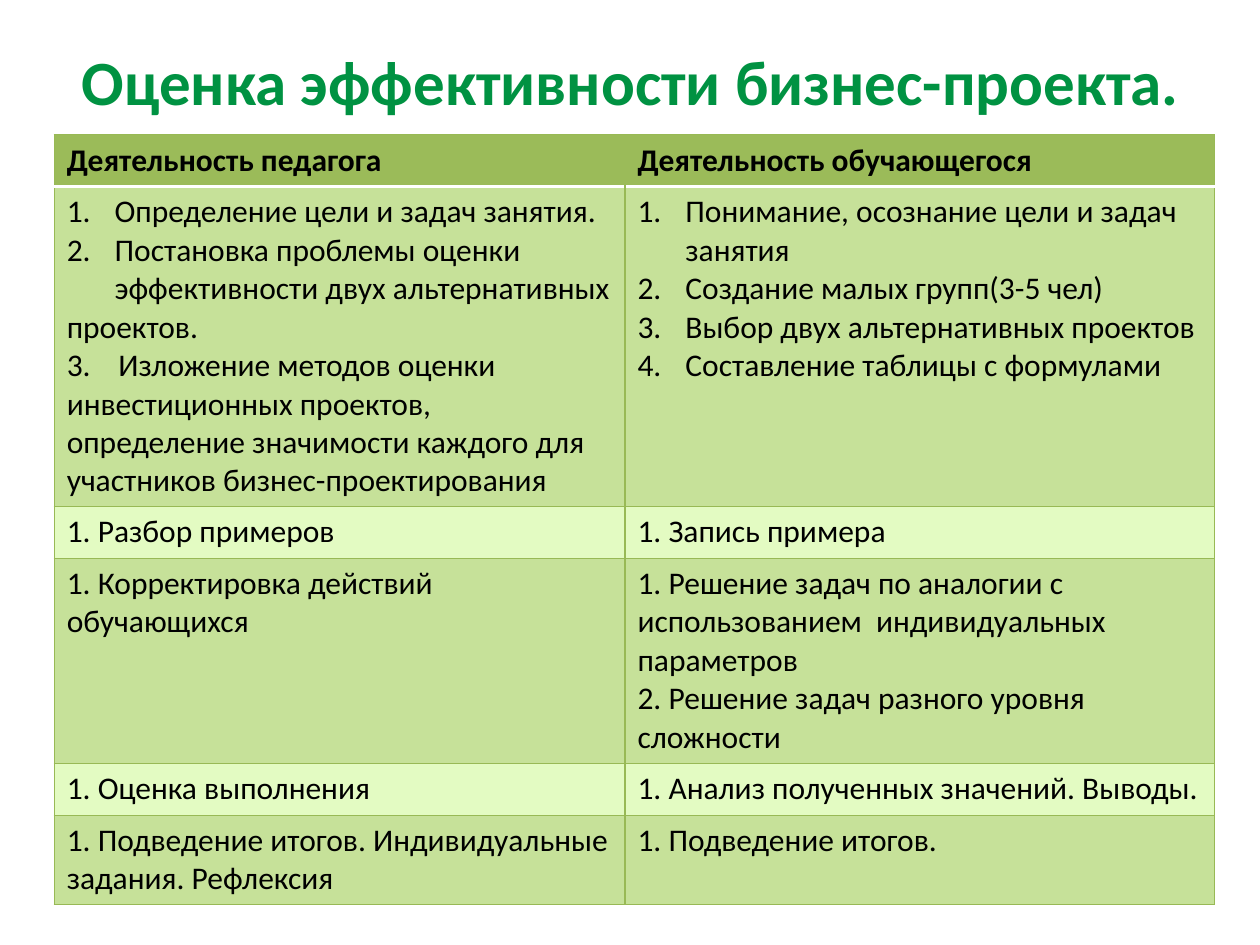
from lxml import etree
from pptx import Presentation
from pptx.dml.color import RGBColor
from pptx.enum.text import MSO_ANCHOR, PP_ALIGN
from pptx.oxml.ns import qn
from pptx.util import Inches, Pt

CENTER, MIDDLE = PP_ALIGN.CENTER, MSO_ANCHOR.MIDDLE

# Content: a tuple is a numbered list, a list is plain paragraphs
TITLE = "Оценка эффективности бизнес-проекта."
ROWS = [
    ([["Деятельность педагога"]], [["Деятельность обучающегося"]]),
    ([("Определение цели и задач занятия.",
       "Постановка проблемы оценки эффективности двух альтернативных"),
      ["проектов.",
       "3.\tИзложение методов оценки инвестиционных проектов, определение "
       "значимости каждого для участников бизнес-проектирования"]],
     [("Понимание, осознание цели и задач занятия",
       "Создание малых групп(3-5 чел)",
       "Выбор двух альтернативных проектов",
       "Составление таблицы с формулами")]),
    ([["1. Разбор примеров"]], [["1. Запись примера"]]),
    ([["1. Корректировка действий обучающихся"]],
     [["1. Решение задач по аналогии с использованием  индивидуальных параметров",
       "2. Решение задач разного уровня сложности"]]),
    ([["1. Оценка выполнения"]], [["1. Анализ полученных значений. Выводы."]]),
    ([["1. Подведение итогов. Индивидуальные задания. Рефлексия"]],
     [["1. Подведение итогов."]]),
]
COL_WIDTHS = [4.53, 4.68]
ROW_HEIGHTS = [0.41, 2.54, 0.41, 1.63, 0.41, 0.71]
NUMBER_INDENT, TAB_STOP = 0.38, 0.41

COLORS = {"title": "009242", "text": "000000", "header": "9BBB59",
          "band": "C6E199", "light": "E3FBC2", "grid": "98B955", "rule": "FFFFFF"}
TITLE_FONT = {"name": "Calibri", "size": Pt(36), "bold": True}
HEAD_FONT = {"name": "Calibri", "size": Pt(18), "bold": True}
BODY_FONT = {**HEAD_FONT, "bold": False}


def add_run(p, text, font, color):
    r = p.add_run()
    r.text = text
    for key, value in font.items():
        setattr(r.font, key, value)
    r.font.color.rgb = RGBColor.from_string(COLORS[color])


def number(p):
    pPr = p._p.get_or_add_pPr()
    pPr.set("marL", str(Inches(NUMBER_INDENT)))
    pPr.set("indent", str(-Inches(NUMBER_INDENT)))
    etree.SubElement(pPr, qn("a:buFont"), typeface="+mj-lt")
    etree.SubElement(pPr, qn("a:buAutoNum"), type="arabicPeriod")


def add_tab_stop(p):
    tabs = etree.SubElement(p._p.get_or_add_pPr(), qn("a:tabLst"))
    etree.SubElement(tabs, qn("a:tab"), pos=str(Inches(TAB_STOP)), algn="l")


def set_border(cell, side, color, width):
    ln = etree.SubElement(cell._tc.get_or_add_tcPr(), qn("a:ln" + side),
                          w=str(Pt(width)))
    if color is None:
        etree.SubElement(ln, qn("a:noFill"))
        return
    fill = etree.SubElement(ln, qn("a:solidFill"))
    etree.SubElement(fill, qn("a:srgbClr"), val=COLORS[color])


def style_cell(cell, row, col):
    borders = {side: ("grid", 0.75) for side in "LRTB"}
    if row == 0:
        borders["R" if col == 0 else "L"] = (None, 0.75)
    if row < 2:
        borders["B" if row == 0 else "T"] = ("rule", 2)
    for side, (color, width) in borders.items():
        set_border(cell, side, color, width)
    color = "header" if row == 0 else "band" if row % 2 else "light"
    cell.fill.solid()
    cell.fill.fore_color.rgb = RGBColor.from_string(COLORS[color])


def fill_cell(cell, blocks, font):
    tf = cell.text_frame
    lines = [(text, isinstance(block, tuple)) for block in blocks for text in block]
    for i, (text, numbered) in enumerate(lines):
        p = tf.add_paragraph() if i else tf.paragraphs[0]
        if numbered:
            number(p)
        elif "\t" in text:
            add_tab_stop(p)
        add_run(p, text, font, "text")


prs = Presentation()
prs.slide_width, prs.slide_height = Inches(10), Inches(7.5)
s = prs.slides.add_slide(prs.slide_layouts[6])

# Title
tf = s.shapes.add_textbox(Inches(0.28), Inches(0.01),
                          Inches(9.45), Inches(1.25)).text_frame
tf.word_wrap = True
tf.vertical_anchor = MIDDLE
tf.paragraphs[0].alignment = CENTER
add_run(tf.paragraphs[0], TITLE, TITLE_FONT, "title")

# Table
table = s.shapes.add_table(len(ROWS), len(COL_WIDTHS), Inches(0.43), Inches(1.07),
                           Inches(sum(COL_WIDTHS)), Inches(sum(ROW_HEIGHTS))).table
for column, width in zip(table.columns, COL_WIDTHS):
    column.width = Inches(width)
for i, (cells, height) in enumerate(zip(ROWS, ROW_HEIGHTS)):
    table.rows[i].height = Inches(height)
    for j, blocks in enumerate(cells):
        style_cell(table.cell(i, j), i, j)
        fill_cell(table.cell(i, j), blocks, BODY_FONT if i else HEAD_FONT)

prs.save("out.pptx")
